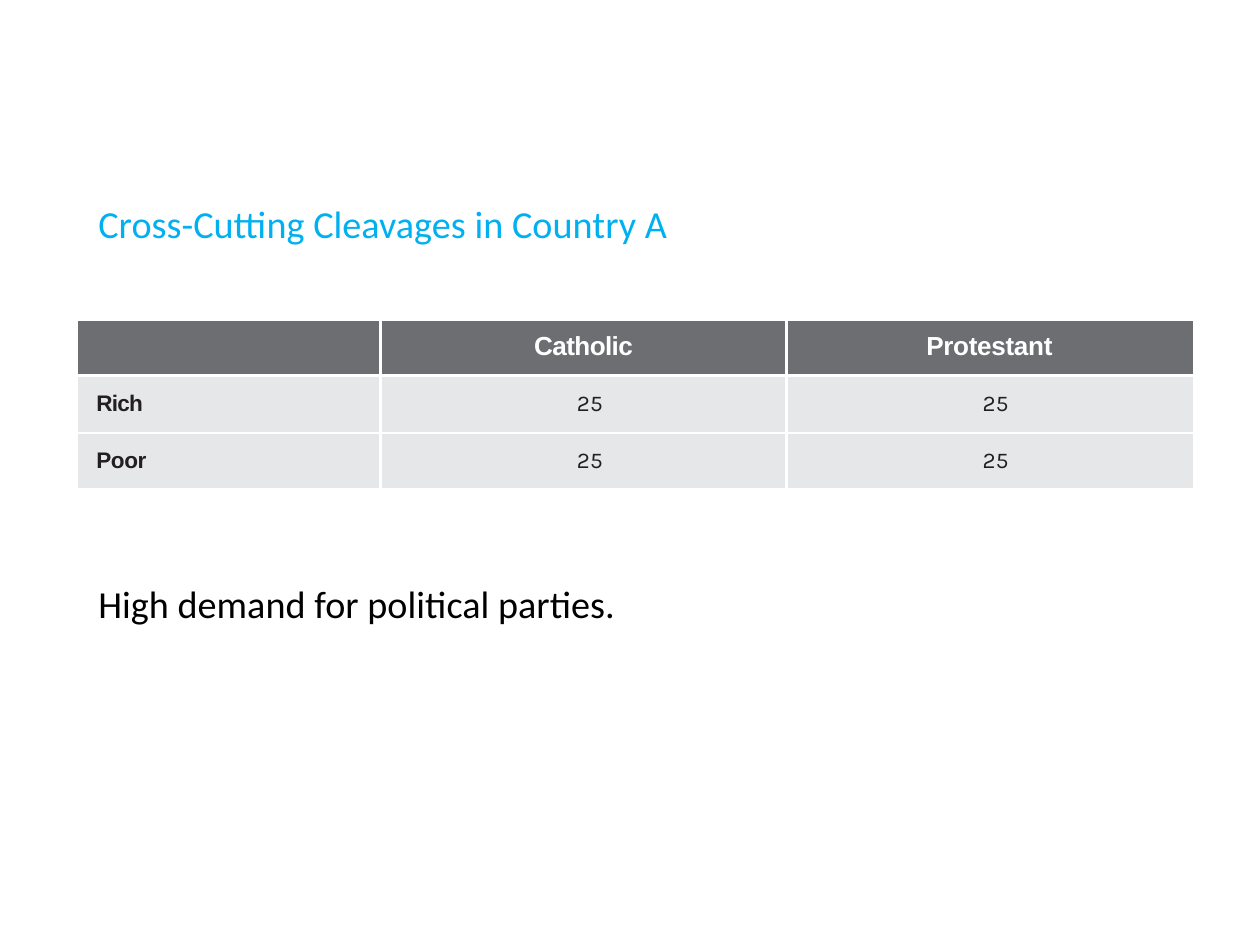
from lxml import etree
from pptx import Presentation
from pptx.dml.color import RGBColor
from pptx.enum import text
from pptx.oxml import ns
from pptx.util import Cm, Pt

CYAN = RGBColor(0x00, 0xB0, 0xF0)
BLACK = RGBColor(0x00, 0x00, 0x00)
WHITE = RGBColor(0xFF, 0xFF, 0xFF)
INK = RGBColor(0x23, 0x1F, 0x20)
HEADER_GREY = RGBColor(0x6D, 0x6E, 0x71)
BODY_GREY = RGBColor(0xE6, 0xE7, 0xE8)

CLEAVAGES = [
    ["", "Catholic", "Protestant"],
    ["Rich", "25", "25"],
    ["Poor", "25", "25"],
]
COLUMN_WIDTHS = [Cm(3.08), Cm(4.12), Cm(4.13)]
ROW_HEIGHTS = [Cm(0.56), Cm(0.58), Cm(0.56)]
# Letter spacing in hundredths of a point
LETTER_SPACING = {"Catholic": -20, "Protestant": -10, "Rich": -20, "Poor": -10, "25": 10}


def format_run(run, font_name, size, color, bold=False):
    run.font.name = font_name
    run.font.size = Pt(size)
    run.font.color.rgb = color
    run.font.bold = bold


def write_line(shape, wording, color, left, top, width):
    """Place a shape and fill it with one line of slide text."""
    shape.left, shape.top, shape.width, shape.height = left, top, width, Cm(0.51)
    frame = shape.text_frame
    frame.text = wording
    frame.word_wrap = True
    frame.auto_size = text.MSO_AUTO_SIZE.NONE
    frame.vertical_anchor = text.MSO_ANCHOR.TOP
    frame.margin_left = Cm(0.03)
    frame.margin_right = frame.margin_bottom = 0
    frame.margin_top = Cm(0.03)
    paragraph = frame.paragraphs[0]
    paragraph.alignment = text.PP_ALIGN.LEFT
    format_run(paragraph.runs[0], "Calibri", 11, color)


def set_borders(cell, inner_sides):
    """Draw white lines on the inner sides and none on the table's outer edge."""
    properties = cell._tc.get_or_add_tcPr()
    for side in "LRTB":
        line = etree.SubElement(properties, ns.qn(f"a:ln{side}"), w=str(Pt(1)))
        if side in inner_sides:
            fill = etree.SubElement(line, ns.qn("a:solidFill"))
            etree.SubElement(fill, ns.qn("a:srgbClr"), val=str(WHITE))
        else:
            etree.SubElement(line, ns.qn("a:noFill"))


def write_cell(cell, wording, is_header, is_label):
    cell.text = wording
    cell.margin_left = cell.margin_right = cell.margin_bottom = 0
    cell.margin_top = Cm(0.11 if is_header else 0.15)
    paragraph = cell.text_frame.paragraphs[0]
    if not wording:
        etree.SubElement(paragraph._p, ns.qn("a:endParaRPr"), sz="700")
        return
    run = paragraph.runs[0]
    if is_header:
        format_run(run, "Arial", 7.5, WHITE, bold=True)
    elif is_label:
        cell.margin_left = Cm(0.19)
        format_run(run, "Arial", 6.5, INK, bold=True)
    else:
        cell.margin_left = Cm(0.13)
        format_run(run, "Karla", 6.5, INK)
    paragraph.alignment = text.PP_ALIGN.LEFT if is_label else text.PP_ALIGN.CENTER
    run._r.get_or_add_rPr().set("spc", str(LETTER_SPACING[wording]))


def add_cleavage_table(slide, left, top):
    row_count, column_count = len(CLEAVAGES), len(COLUMN_WIDTHS)
    table = slide.shapes.add_table(
        row_count, column_count, left, top, sum(COLUMN_WIDTHS), sum(ROW_HEIGHTS)
    ).table
    table.horz_banding = False
    for column, width in zip(table.columns, COLUMN_WIDTHS):
        column.width = width
    for row, height in zip(table.rows, ROW_HEIGHTS):
        row.height = height
    for r, wordings in enumerate(CLEAVAGES):
        for c, wording in enumerate(wordings):
            cell = table.cell(r, c)
            write_cell(cell, wording, is_header=r == 0, is_label=c == 0)
            is_inner = {"L": c > 0, "R": c < column_count - 1,
                        "T": r > 0, "B": r < row_count - 1}
            set_borders(cell, [side for side in is_inner if is_inner[side]])
            cell.fill.solid()
            cell.fill.fore_color.rgb = BODY_GREY if r else HEADER_GREY


def main():
    presentation = Presentation()
    presentation.slide_width, presentation.slide_height = Pt(363), Pt(272.5)
    slide = presentation.slides.add_slide(presentation.slide_layouts[5])
    text_left = Cm(0.97)
    write_line(slide.shapes.title, "Cross-Cutting Cleavages in Country A", CYAN,
               text_left, Cm(2.01), Cm(6.17))
    add_cleavage_table(slide, Cm(0.79), Cm(3.26))
    conclusion = slide.shapes.add_textbox(0, 0, 0, 0)
    write_line(conclusion, "High demand for political parties.", BLACK,
               text_left, Cm(5.87), Cm(5.46))
    presentation.save("out.pptx")


if __name__ == "__main__":
    main()
